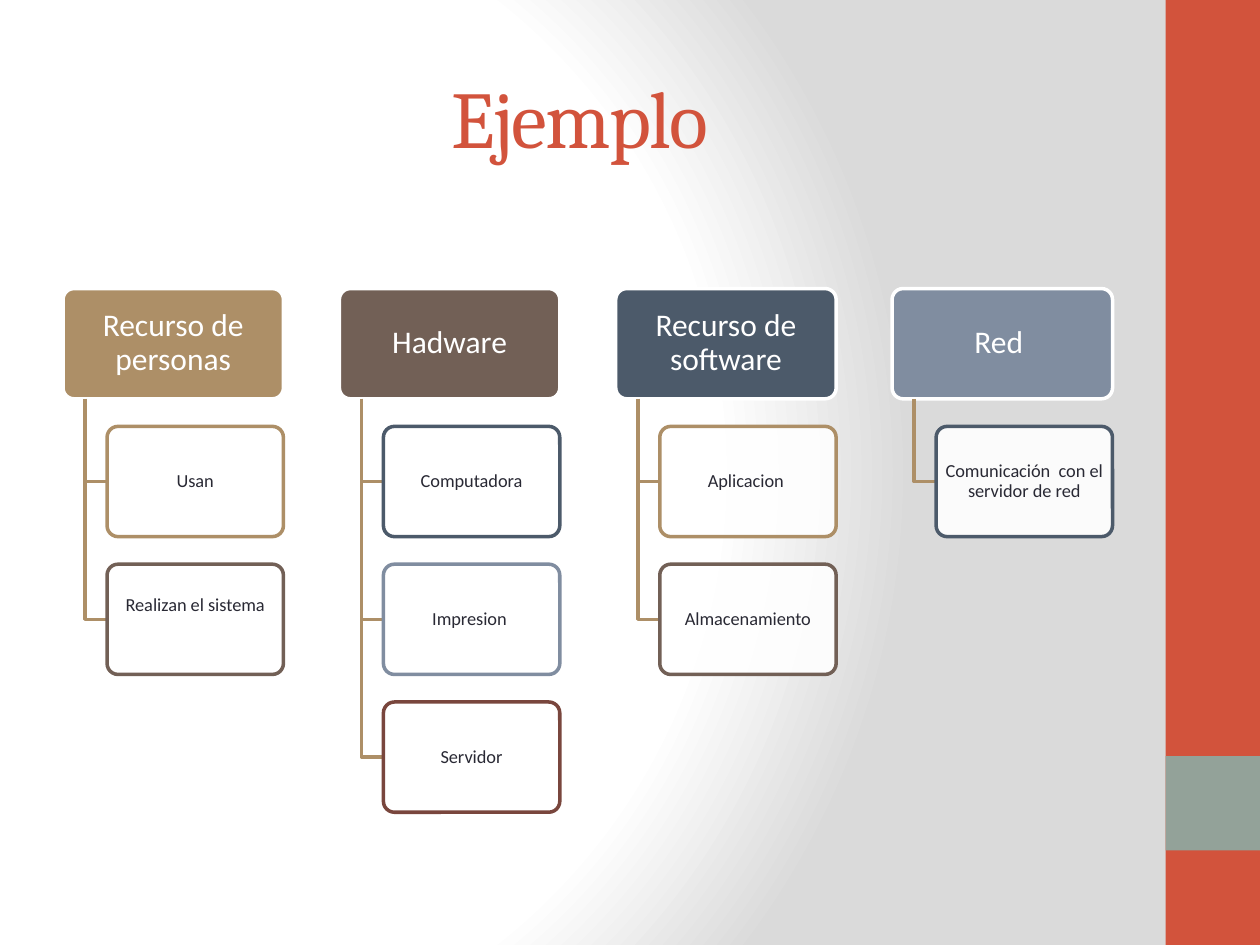
from dataclasses import dataclass

from lxml.etree import SubElement
from pptx import Presentation
from pptx.dml.color import RGBColor
from pptx.enum.shapes import MSO_SHAPE
from pptx.enum.text import MSO_ANCHOR, PP_ALIGN
from pptx.oxml import parse_xml
from pptx.oxml.ns import nsdecls, qn
from pptx.util import Inches, Pt


@dataclass(frozen=True)
class Theme:
    heading_font: str = "Cambria"
    body_font: str = "Calibri"
    title_size: float = 46
    header_size: float = 18
    item_size: float = 10.5
    line_width: float = 2
    red: str = "D2533C"
    sage: str = "93A299"
    tan: str = "AD8F67"
    brown: str = "726056"
    slate: str = "4C5A6A"
    blue: str = "808DA0"
    maroon: str = "79463D"
    white: str = "FFFFFF"
    gray: str = "DADADA"
    ink: str = "292934"


THEME = Theme()

# Each column: header, header colour, items with their outline colours
COLUMNS = [
    ("Recurso de personas", THEME.tan,
     [("Usan", THEME.tan), ("Realizan el sistema", THEME.brown)]),
    ("Hadware", THEME.brown,
     [("Computadora", THEME.slate), ("Impresion ", THEME.blue), ("Servidor", THEME.maroon)]),
    ("Recurso de software", THEME.slate,
     [("Aplicacion ", THEME.tan), ("Almacenamiento", THEME.brown)]),
    ("Red ", THEME.blue,
     [("Comunicación  con el servidor de red", THEME.slate)]),
]
RAISED_ITEM = "Realizan el sistema"

CHART_LEFT, CHART_TOP, CHART_WIDTH = Inches(0.5), Inches(2.29), Inches(8.33)
HEADER_WIDTH = Inches(1.75)
BOX_HEIGHT = HEADER_WIDTH // 2
ITEM_WIDTH = int(HEADER_WIDTH * 0.8)
ITEM_INDENT = HEADER_WIDTH - ITEM_WIDTH
TRUNK_INDENT = ITEM_INDENT // 2
COLUMN_STEP = (CHART_WIDTH - HEADER_WIDTH) // (len(COLUMNS) - 1)
ROW_STEP = int(BOX_HEIGHT * 1.25)


class SlideBuilder:
    """Holds the theme and the current slide."""

    def __init__(self, slide, theme):
        self.slide = slide
        self.theme = theme

    def background(self):
        """Fill the slide with a radial gradient centred to the left."""
        self.slide.background.fill.solid()
        properties = self.slide.element.find(".//" + qn("p:bgPr"))
        stops = "".join(
            f'<a:gs pos="{position}"><a:srgbClr val="{color}"/></a:gs>'
            for position, color in [(0, self.theme.white), (75000, self.theme.white),
                                    (100000, self.theme.gray)])
        gradient = parse_xml(
            f'<a:gradFill rotWithShape="1" {nsdecls("a")}><a:gsLst>{stops}</a:gsLst>'
            '<a:path path="circle"><a:fillToRect l="20000" t="50000" r="100000" b="50000"/>'
            '</a:path></a:gradFill>')
        properties.replace(properties[0], gradient)

    def band(self, top, height, color):
        shape = self.slide.shapes.add_shape(
            MSO_SHAPE.RECTANGLE, Inches(9.25), top, Inches(0.75), height)
        shape.shadow.inherit = False
        shape.fill.solid()
        shape.fill.fore_color.rgb = RGBColor.from_string(color)
        shape.line.fill.background()

    def centered_text(self, frame, text, font, size, color):
        frame.word_wrap = True
        frame.vertical_anchor = MSO_ANCHOR.MIDDLE
        paragraph = frame.paragraphs[0]
        paragraph.alignment = PP_ALIGN.CENTER
        run = paragraph.add_run()
        run.text = text
        run.font.name = font
        run.font.size = Pt(size)
        run.font.color.rgb = RGBColor.from_string(color)
        return paragraph, run

    def title(self, text):
        title = self.slide.shapes.title
        title.left, title.top = Inches(0.5), Inches(0.3)
        title.width, title.height = Inches(8.33), Inches(1.25)
        _, run = self.centered_text(title.text_frame, text, self.theme.heading_font,
                                    self.theme.title_size, self.theme.red)
        run._r.get_or_add_rPr().set("spc", "-100")

    def box(self, left, top, width, text, fill, line, size, color, margin):
        shape = self.slide.shapes.add_shape(
            MSO_SHAPE.ROUNDED_RECTANGLE, left, top, width, BOX_HEIGHT)
        shape.adjustments[0] = 0.1
        shape.shadow.inherit = False
        shape.fill.solid()
        shape.fill.fore_color.rgb = RGBColor.from_string(fill)
        shape.line.color.rgb = RGBColor.from_string(line)
        shape.line.width = Pt(self.theme.line_width)
        frame = shape.text_frame
        frame.margin_left = frame.margin_right = margin
        frame.margin_top = frame.margin_bottom = Inches(0.02)
        paragraph, _ = self.centered_text(frame, text, self.theme.body_font, size, color)
        paragraph.line_spacing = 0.9
        return shape

    def header(self, left, top, text, color):
        self.box(left, top, HEADER_WIDTH, text, color, self.theme.white,
                 self.theme.header_size, self.theme.white, Inches(0.04))

    def item(self, left, top, text, outline):
        shape = self.box(left, top, ITEM_WIDTH, text, self.theme.white, outline,
                         self.theme.item_size, self.theme.ink, Inches(0.02))
        fill_color = shape.element.spPr.find(qn("a:solidFill"))[0]
        SubElement(fill_color, qn("a:alpha")).set("val", "90000")
        if text == RAISED_ITEM:
            shape.text_frame.margin_bottom = Inches(0.24)

    def elbow(self, left, top, right, bottom):
        """Draw a line down from the header, then right to an item."""
        builder = self.slide.shapes.build_freeform(left, top)
        builder.add_line_segments([(left, bottom), (right, bottom)], close=False)
        shape = builder.convert_to_shape()
        shape.shadow.inherit = False
        shape.fill.background()
        shape.line.color.rgb = RGBColor.from_string(self.theme.tan)
        shape.line.width = Pt(self.theme.line_width)

    def column(self, left, text, color, items):
        self.header(left, CHART_TOP, text, color)
        item_left = left + ITEM_INDENT
        for row, (item_text, outline) in enumerate(items, start=1):
            item_top = CHART_TOP + row * ROW_STEP
            self.elbow(left + TRUNK_INDENT, CHART_TOP + BOX_HEIGHT,
                       item_left, item_top + BOX_HEIGHT // 2)
            self.item(item_left, item_top, item_text, outline)


def main():
    presentation = Presentation()
    presentation.slide_width, presentation.slide_height = Inches(10), Inches(7.5)
    slide = presentation.slides.add_slide(presentation.slide_layouts.get_by_name("Title Only"))
    builder = SlideBuilder(slide, THEME)
    builder.background()
    builder.band(0, presentation.slide_height, THEME.red)
    builder.band(Inches(6), Inches(0.75), THEME.sage)
    builder.title("Ejemplo ")
    for index, (text, color, items) in enumerate(COLUMNS):
        builder.column(CHART_LEFT + index * COLUMN_STEP, text, color, items)
    presentation.save("out.pptx")


if __name__ == "__main__":
    main()
